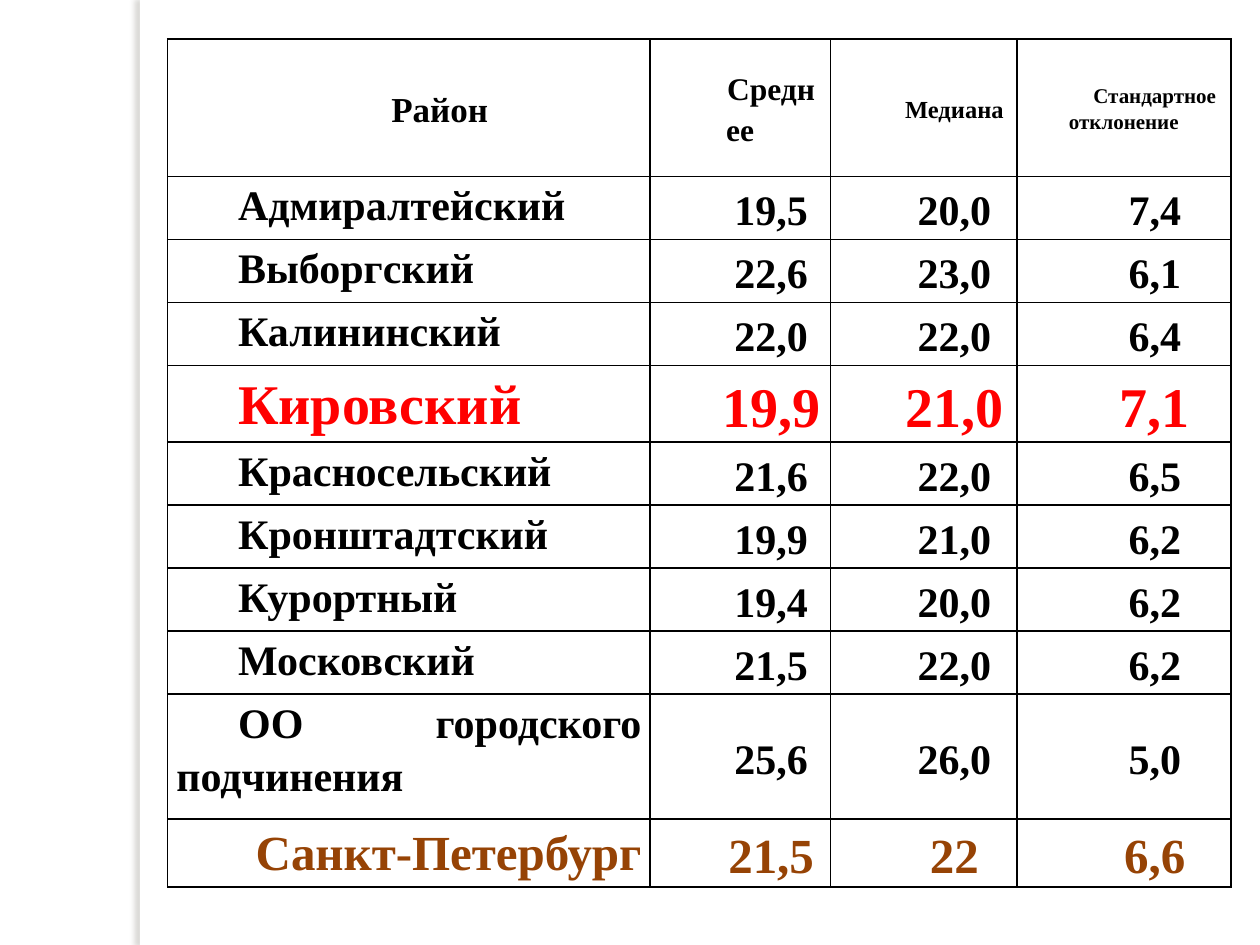
"""Builds a slide with a table of district exam statistics."""
from dataclasses import dataclass

from lxml.etree import SubElement
from pptx import Presentation
from pptx.dml.color import RGBColor
from pptx.enum.shapes import MSO_SHAPE
from pptx.enum.text import MSO_ANCHOR, PP_ALIGN
from pptx.oxml import parse_xml
from pptx.oxml.ns import nsdecls, qn
from pptx.util import Inches, Pt


@dataclass(frozen=True)
class Theme:
    font: str = "Times New Roman"
    paper: str = "FFFFFF"
    ink: str = "000000"
    accent: str = "FF0000"
    total: str = "964305"
    shadow: str = "736F63"
    body_size: int = 24
    accent_size: int = 32
    total_size: int = 28
    heading_sizes: tuple[int, ...] = (20, 18, 14, 12)


THEME = Theme()


@dataclass(frozen=True)
class District:
    name: str
    values: tuple[str, str, str]
    height: float = 0.5
    size: int = THEME.body_size
    color: str = THEME.ink
    name_align: PP_ALIGN = PP_ALIGN.JUSTIFY


HEADINGS = ("Район", "Среднее", "Медиана", "Стандартное отклонение")
HEADING_HEIGHT = 1.09
COLUMN_WIDTHS = (3.83, 1.43, 1.48, 1.7)
DISTRICTS = (
    District("Адмиралтейский", ("19,5", "20,0", "7,4")),
    District("Выборгский", ("22,6", "23,0", "6,1")),
    District("Калининский", ("22,0", "22,0", "6,4")),
    District("Кировский", ("19,9", "21,0", "7,1"), 0.61, THEME.accent_size, THEME.accent),
    District("Красносельский", ("21,6", "22,0", "6,5")),
    District("Кронштадтский", ("19,9", "21,0", "6,2")),
    District("Курортный", ("19,4", "20,0", "6,2")),
    District("Московский", ("21,5", "22,0", "6,2")),
    District("ОО городского подчинения", ("25,6", "26,0", "5,0"), 0.99),
    District("Санкт-Петербург", ("21,5", "22", "6,6"), 0.54, THEME.total_size,
             THEME.total, PP_ALIGN.RIGHT),
)


def draw_side_bar(page) -> None:
    """Draw the white bar that casts a soft shadow to the left."""
    bar = page.shapes.add_shape(MSO_SHAPE.RECTANGLE, Inches(1.11), 0, Inches(0.08), Inches(7.5))
    bar.fill.solid()
    bar.fill.fore_color.rgb = RGBColor.from_string(THEME.paper)
    bar.line.fill.background()
    bar.shadow.inherit = False
    effects = bar._element.spPr.find(qn("a:effectLst"))
    effects.append(parse_xml(
        f'<a:outerShdw {nsdecls("a")} blurRad="{Pt(3)}" dist="{Pt(3)}" dir="10800000" '
        f'algn="ctr" rotWithShape="0"><a:srgbClr val="{THEME.shadow}">'
        '<a:alpha val="25000"/></a:srgbClr></a:outerShdw>'))


def draw_borders(cell) -> None:
    """Rule all four edges of a cell."""
    properties = cell._tc.get_or_add_tcPr()
    for edge in ("lnL", "lnR", "lnT", "lnB"):
        line = SubElement(properties, qn(f"a:{edge}"), w=str(Pt(1)))
        fill = SubElement(line, qn("a:solidFill"))
        SubElement(fill, qn("a:srgbClr"), val=THEME.ink)


def write_cell(cell, text: str, *, size: int, color: str = THEME.ink,
               align: PP_ALIGN = PP_ALIGN.CENTER,
               anchor: MSO_ANCHOR = MSO_ANCHOR.MIDDLE) -> None:
    """Write bold text with a first-line indent into a ruled cell."""
    cell.margin_left = cell.margin_right = Inches(0.07)
    cell.margin_top = cell.margin_bottom = 0
    cell.vertical_anchor = anchor
    draw_borders(cell)
    cell.fill.background()
    para = cell.text_frame.paragraphs[0]
    para.alignment = align
    para.line_spacing = 1.15
    properties = para._p.get_or_add_pPr()
    properties.set("marL", "0")
    properties.set("indent", str(Inches(0.49)))
    span = para.add_run()
    span.text = text
    span.font.name = THEME.font
    span.font.size = Pt(size)
    span.font.bold = True
    span.font.color.rgb = RGBColor.from_string(color)


def draw_table(page) -> None:
    """Draw the headings and one row per district."""
    heights = (HEADING_HEIGHT, *(district.height for district in DISTRICTS))
    frame = page.shapes.add_table(
        len(heights), len(COLUMN_WIDTHS), Inches(1.33), Inches(0.31),
        Inches(sum(COLUMN_WIDTHS)), Inches(sum(heights)))
    table = frame.table
    table.first_row = table.horz_banding = False
    for column, width in zip(table.columns, COLUMN_WIDTHS):
        column.width = Inches(width)
    for row, height in zip(table.rows, heights):
        row.height = Inches(height)
    for index, (heading, size) in enumerate(zip(HEADINGS, THEME.heading_sizes)):
        write_cell(table.cell(0, index), heading, size=size)
    for row, district in enumerate(DISTRICTS, start=1):
        write_cell(table.cell(row, 0), district.name, size=district.size, color=district.color,
                   align=district.name_align, anchor=MSO_ANCHOR.TOP)
        for column, value in enumerate(district.values, start=1):
            write_cell(table.cell(row, column), value, size=district.size, color=district.color)


def main() -> None:
    """Build and save the deck."""
    deck = Presentation()
    deck.slide_width, deck.slide_height = Inches(10), Inches(7.5)
    page = deck.slides.add_slide(deck.slide_layouts[6])
    draw_side_bar(page)
    draw_table(page)
    deck.save("out.pptx")


if __name__ == "__main__":
    main()
